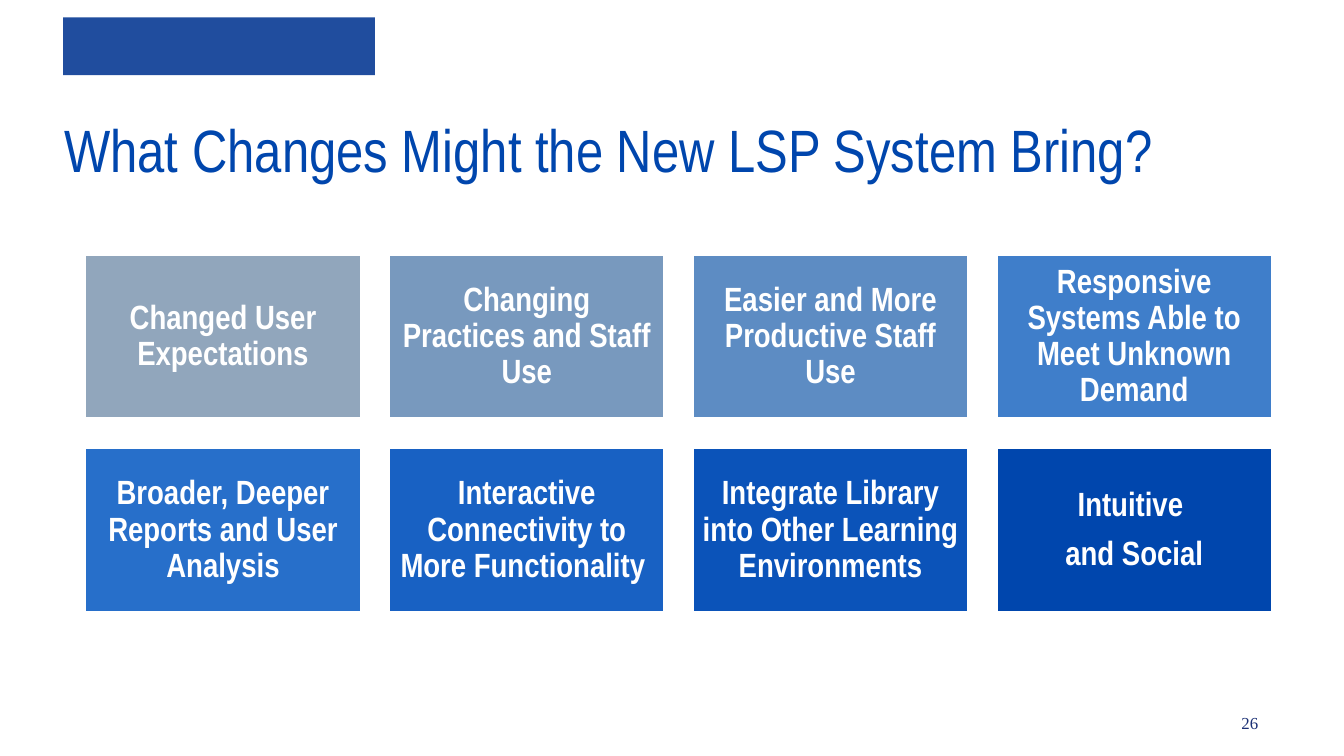
from pptx import Presentation
from pptx.dml.color import RGBColor
from pptx.enum.shapes import MSO_SHAPE
from pptx.enum.text import MSO_ANCHOR, PP_ALIGN
from pptx.util import Inches, Pt

SLIDE_WIDTH = 10
SLIDE_HEIGHT = SLIDE_WIDTH * 9 / 16
TITLE = "What Changes Might the New LSP System Bring?"
PAGE_NUMBER = "26"
CARDS = [
    ("91A6BC", ["Changed User Expectations"]),
    ("7899BE", ["Changing Practices and Staff Use"]),
    ("5D8CC3", ["Easier and More Productive Staff Use"]),
    ("3F7ECA", ["Responsive Systems Able to Meet Unknown Demand"]),
    ("276FCA", ["Broader, Deeper Reports and User Analysis"]),
    ("1861C3", ["Interactive Connectivity to More Functionality "]),
    ("0B53B9", ["Integrate Library into Other Learning Environments"]),
    ("0046AD", ["Intuitive ", "and Social"]),
]
COLUMNS = 4
GRID_LEFT, GRID_TOP = 0.63, 1.89
CARD_WIDTH, CARD_HEIGHT = 2.06, 1.23
COLUMN_STEP, ROW_STEP = 2.26, 1.44

TITLE_FONT = {"name": "Arial Narrow", "size": Pt(32)}
CARD_FONT = {"name": "Arial Narrow", "size": Pt(18), "bold": True}
NUMBER_FONT = {"name": "Times New Roman", "size": Pt(9)}
CARD_PARAGRAPH = {"alignment": PP_ALIGN.CENTER, "line_spacing": 0.9, "space_after": Pt(6.3)}
CARD_FRAME = {"vertical_anchor": MSO_ANCHOR.MIDDLE} | {
    f"margin_{side}": Pt(5.6) for side in ("left", "top", "right", "bottom")
}


def color(value):
    """Return the colour for a hex string."""
    return RGBColor.from_string(value)


def apply(target, values):
    """Set every attribute named in values on target."""
    for name, value in values.items():
        setattr(target, name, value)


def write(shape, lines, font, font_color, paragraph_format, frame_format):
    """Fill a shape with one formatted paragraph per line."""
    frame = shape.text_frame
    frame.word_wrap = True
    apply(frame, frame_format)
    frame.text = "\n".join(lines)
    for paragraph in frame.paragraphs:
        apply(paragraph, paragraph_format)
        apply(paragraph.font, font)
        paragraph.font.color.rgb = color(font_color)


def add_box(slide, bounds, fill):
    """Add a filled rectangle without line or shadow."""
    shape = slide.shapes.add_shape(MSO_SHAPE.RECTANGLE, *map(Inches, bounds))
    shape.shadow.inherit = False
    shape.fill.solid()
    shape.fill.fore_color.rgb = color(fill)
    shape.line.fill.background()
    return shape


def add_text(slide, bounds, text, font, font_color, alignment):
    """Add a text box with a single paragraph."""
    box = slide.shapes.add_textbox(*map(Inches, bounds))
    write(box, [text], font, font_color, {"alignment": alignment}, {})


def add_card(slide, index, fill, lines):
    """Add one card at its place in the grid."""
    row, column = divmod(index, COLUMNS)
    left = GRID_LEFT + column * COLUMN_STEP
    top = GRID_TOP + row * ROW_STEP
    card = add_box(slide, (left, top, CARD_WIDTH, CARD_HEIGHT), fill)
    card.line.color.rgb = color("FFFFFF")
    card.line.width = Pt(2)
    write(card, lines, CARD_FONT, "FFFFFF", CARD_PARAGRAPH, CARD_FRAME)


def main():
    """Build and save the slide."""
    presentation = Presentation()
    presentation.slide_width = Inches(SLIDE_WIDTH)
    presentation.slide_height = Inches(SLIDE_HEIGHT)
    slide = presentation.slides.add_slide(presentation.slide_layouts[6])
    add_text(slide, (7.97, 5.25, 1.49, 0.25), PAGE_NUMBER, NUMBER_FONT, "1B3075", PP_ALIGN.RIGHT)
    add_box(slide, (0.47, 0.13, 2.32, 0.43), "204D9E")
    add_text(slide, (0.38, 0.79, 9.42, 0.64), TITLE, TITLE_FONT, "0046AD", PP_ALIGN.LEFT)
    for index, (fill, lines) in enumerate(CARDS):
        add_card(slide, index, fill, lines)
    presentation.save("out.pptx")


if __name__ == "__main__":
    main()
